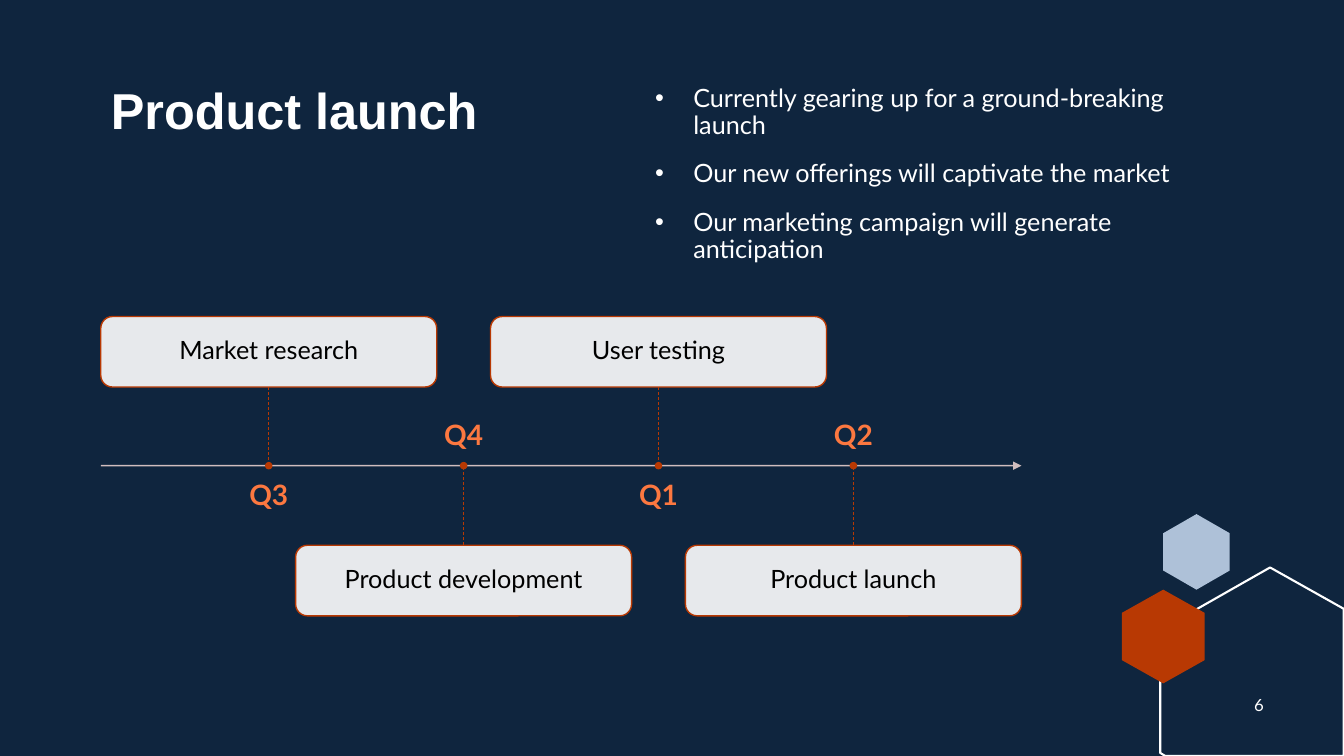
import dataclasses

import pptx
import pptx.dml.color
import pptx.enum.dml
import pptx.enum.shapes
import pptx.enum.text
import pptx.oxml.ns
import pptx.util
from lxml import etree


def rgb(value):
    return pptx.dml.color.RGBColor.from_string(value)


@dataclasses.dataclass(frozen=True)
class Theme:
    background: str = "0F253E"
    light: str = "FFFFFF"
    dark: str = "000000"
    accent: str = "B83903"
    quarter: str = "FC7840"
    axis: str = "E6CECC"
    pale: str = "AEC1D8"
    heading_font: str = "Arial"
    body_font: str = "Lato"
    title_size: int = 36
    quarter_size: int = 20
    body_size: int = 18
    number_size: int = 12


theme = Theme()
ALIGN = pptx.enum.text.PP_ALIGN
ANCHOR = pptx.enum.text.MSO_ANCHOR
SHAPE = pptx.enum.shapes.MSO_SHAPE
STRAIGHT = pptx.enum.shapes.MSO_CONNECTOR.STRAIGHT
qn = pptx.oxml.ns.qn

presentation = pptx.Presentation()
presentation.slide_width = pptx.util.Inches(13.333)
presentation.slide_height = pptx.util.Inches(7.5)
column = presentation.slide_width / 200
row = presentation.slide_height / 75

slide = presentation.slides.add_slide(presentation.slide_layouts[5])
slide.background.fill.solid()
slide.background.fill.fore_color.rgb = rgb(theme.background)
shapes = slide.shapes


def grid(left, top, width, height):
    """Turn grid columns and rows into slide lengths."""
    return int(left * column), int(top * row), int(width * column), int(height * row)


def write(shape, lines, size, color, align=ALIGN.CENTER, anchor=ANCHOR.TOP,
          font=theme.body_font, bold=False, inset=0, bullet=False):
    """Fill a shape with one formatted paragraph per line."""
    frame = shape.text_frame
    frame.word_wrap = True
    frame.auto_size = pptx.enum.text.MSO_AUTO_SIZE.NONE
    frame.vertical_anchor = anchor
    frame.margin_left = frame.margin_right = pptx.util.Inches(inset)
    frame.margin_top = frame.margin_bottom = pptx.util.Inches(inset / 2)
    for index, line in enumerate(lines):
        paragraph = frame.add_paragraph() if index else frame.paragraphs[0]
        if bullet:
            properties = paragraph._p.get_or_add_pPr()
            properties.set("marL", str(pptx.util.Inches(0.38)))
            properties.set("indent", str(pptx.util.Inches(-0.38)))
            etree.SubElement(properties, qn("a:buFont"), typeface="Arial")
            etree.SubElement(properties, qn("a:buChar"), char="•")
        paragraph.alignment = align
        paragraph.line_spacing = 0.9
        if index:
            paragraph.space_before = pptx.util.Pt(15)
        run = paragraph.add_run()
        run.text = line
        run.font.name = font
        run.font.size = pptx.util.Pt(size)
        run.font.bold = bold
        run.font.color.rgb = rgb(color)


# Corner hexagons, in hundredths of an inch
def hexagon_points(center_x, center_y, half_width, half_height):
    shoulder = half_height / 2
    return [(center_x, center_y - half_height),
            (center_x + half_width, center_y - shoulder),
            (center_x + half_width, center_y + shoulder),
            (center_x, center_y + half_height),
            (center_x - half_width, center_y + shoulder),
            (center_x - half_width, center_y - shoulder)]


cropped_hexagon = [(1260, 563), (1333, 604), (1333, 750),
                   (1156, 750), (1151, 747), (1151, 625)]
for points, fill in [(hexagon_points(1187, 547.5, 33, 37.5), theme.pale),
                     (cropped_hexagon, None),
                     (hexagon_points(1154, 631.5, 41, 46.5), theme.accent)]:
    builder = shapes.build_freeform(*points[0], scale=pptx.util.Inches(0.01))
    builder.add_line_segments(points[1:], close=True)
    hexagon = builder.convert_to_shape()
    hexagon.shadow.inherit = False
    if fill:
        hexagon.fill.solid()
        hexagon.fill.fore_color.rgb = rgb(fill)
        hexagon.line.fill.background()
    else:
        hexagon.fill.background()
        hexagon.line.color.rgb = rgb(theme.light)
        hexagon.line.width = pptx.util.Pt(1.5)

# Title, bullets and slide number
title = shapes.title
title.left, title.top, title.width, title.height = grid(15, 8, 76.5, 19)
write(title, ["Product launch"], theme.title_size, theme.light, ALIGN.LEFT,
      font=theme.heading_font, bold=True, inset=0.1)
write(shapes.add_textbox(*grid(96, 8, 90, 19)),
      ["Currently gearing up for a ground-breaking launch",
       "Our new offerings will captivate the market",
       "Our marketing campaign will generate anticipation"],
      theme.body_size, theme.light, ALIGN.LEFT, inset=0.1, bullet=True)
write(shapes.add_textbox(*grid(183.6, 68, 7.5, 4)), ["6"], theme.number_size,
      theme.light, anchor=ANCHOR.MIDDLE, inset=0.1)

# Timeline
first_column, box_width, pitch = 15, 50, 29
axis_row, dot_size = 46.2, pptx.util.Inches(0.06)
milestones = [("Q3", "Market research"), ("Q4", "Product development"),
              ("Q1", "User testing"), ("Q2", "Product launch")]
last_column = first_column + pitch * (len(milestones) - 1) + box_width
axis_y = int(axis_row * row)

axis = shapes.add_connector(STRAIGHT, int(first_column * column), axis_y,
                            int(last_column * column), axis_y)
axis.line.color.rgb = rgb(theme.axis)
axis.line.width = pptx.util.Pt(1)
etree.SubElement(axis.line._get_or_add_ln(), qn("a:tailEnd"), type="triangle")
connectors, translucent = [axis], [axis]

for index, (quarter, milestone) in enumerate(milestones):
    above = index % 2 == 0
    left = first_column + index * pitch
    center_x = int((left + box_width / 2) * column)

    box = shapes.add_shape(SHAPE.ROUNDED_RECTANGLE,
                           *grid(left, 31.4 if above else 54.1, box_width, 7))
    box.fill.solid()
    box.fill.fore_color.rgb = rgb(theme.light)
    write(box, [milestone], theme.body_size, theme.dark,
          anchor=ANCHOR.MIDDLE, inset=0.17)
    translucent.append(box)

    label = shapes.add_textbox(*grid(left + 3, 47.8 if above else 40.1, 44, 4.7))
    write(label, [quarter], theme.quarter_size, theme.quarter, bold=True,
          anchor=ANCHOR.TOP if above else ANCHOR.BOTTOM)

    stem = shapes.add_connector(STRAIGHT, center_x, axis_y, center_x, axis_y)
    stem.begin_connect(box, 2 if above else 0)
    stem.line.color.rgb = rgb(theme.accent)
    stem.line.width = pptx.util.Pt(0.5)
    stem.line.dash_style = pptx.enum.dml.MSO_LINE.DASH
    connectors.append(stem)

    dot = shapes.add_shape(SHAPE.OVAL, center_x - dot_size // 2,
                           axis_y - dot_size // 2, dot_size, dot_size)
    dot.fill.solid()
    dot.fill.fore_color.rgb = rgb(theme.accent)
    for shape in (box, dot):
        shape.shadow.inherit = False
        shape.line.color.rgb = rgb(theme.accent)
        shape.line.width = pptx.util.Pt(1)

for shape in translucent:
    color = next(shape.element.spPr.iter(qn("a:srgbClr")))
    etree.SubElement(color, qn("a:alpha"), val="90000")
for connector in connectors:
    etree.SubElement(connector.element.spPr, qn("a:effectLst"))

presentation.save("out.pptx")
